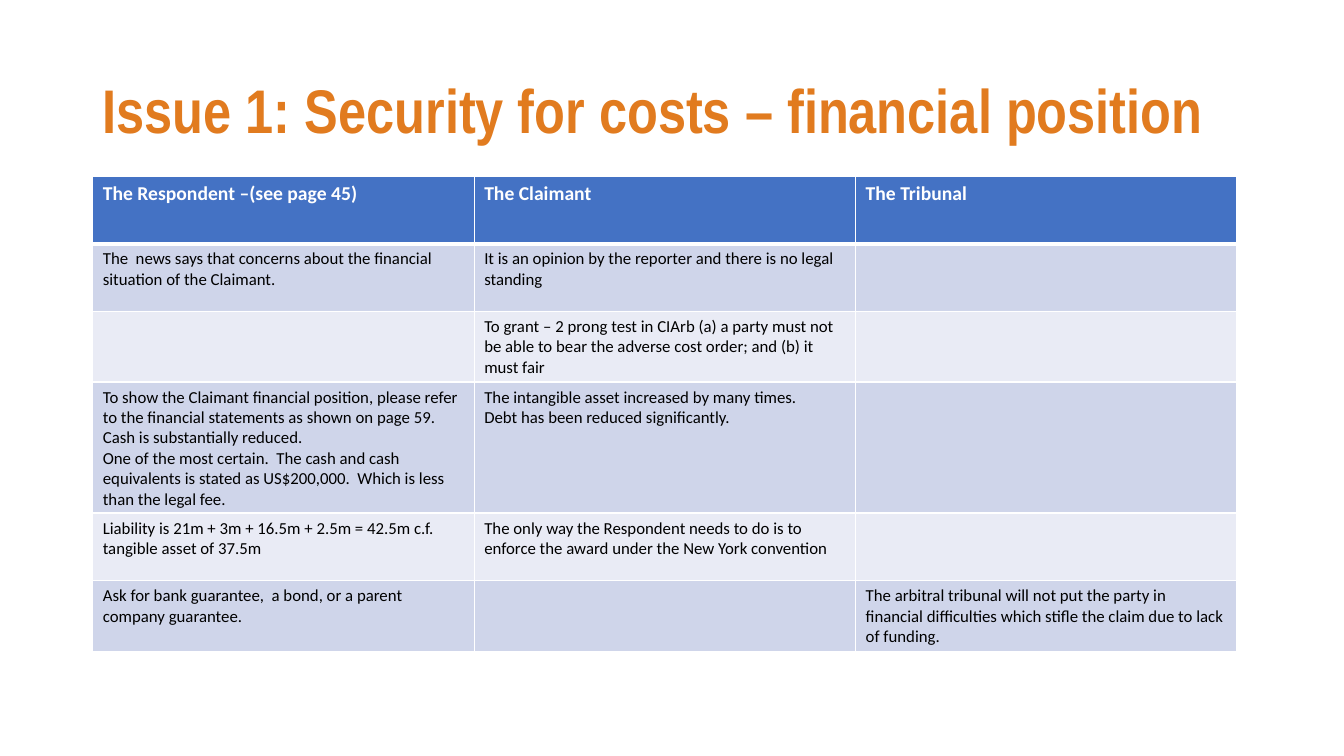
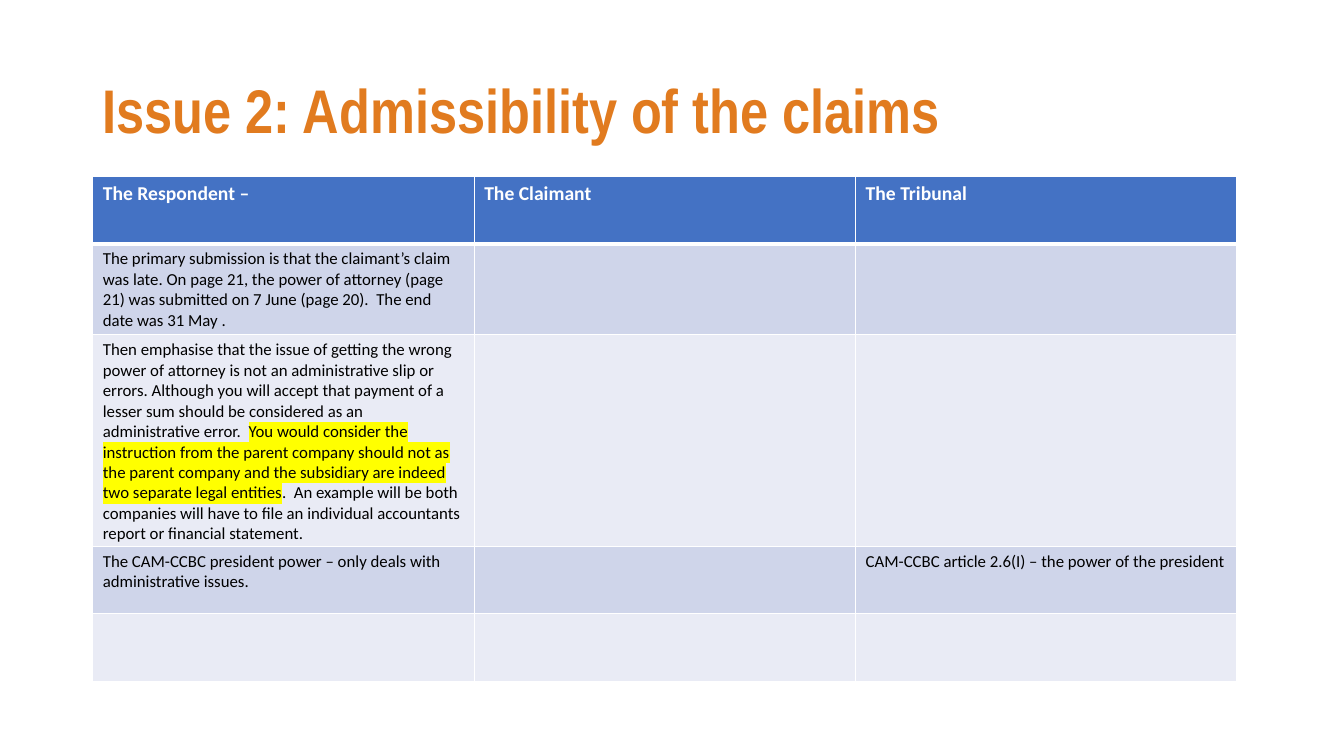
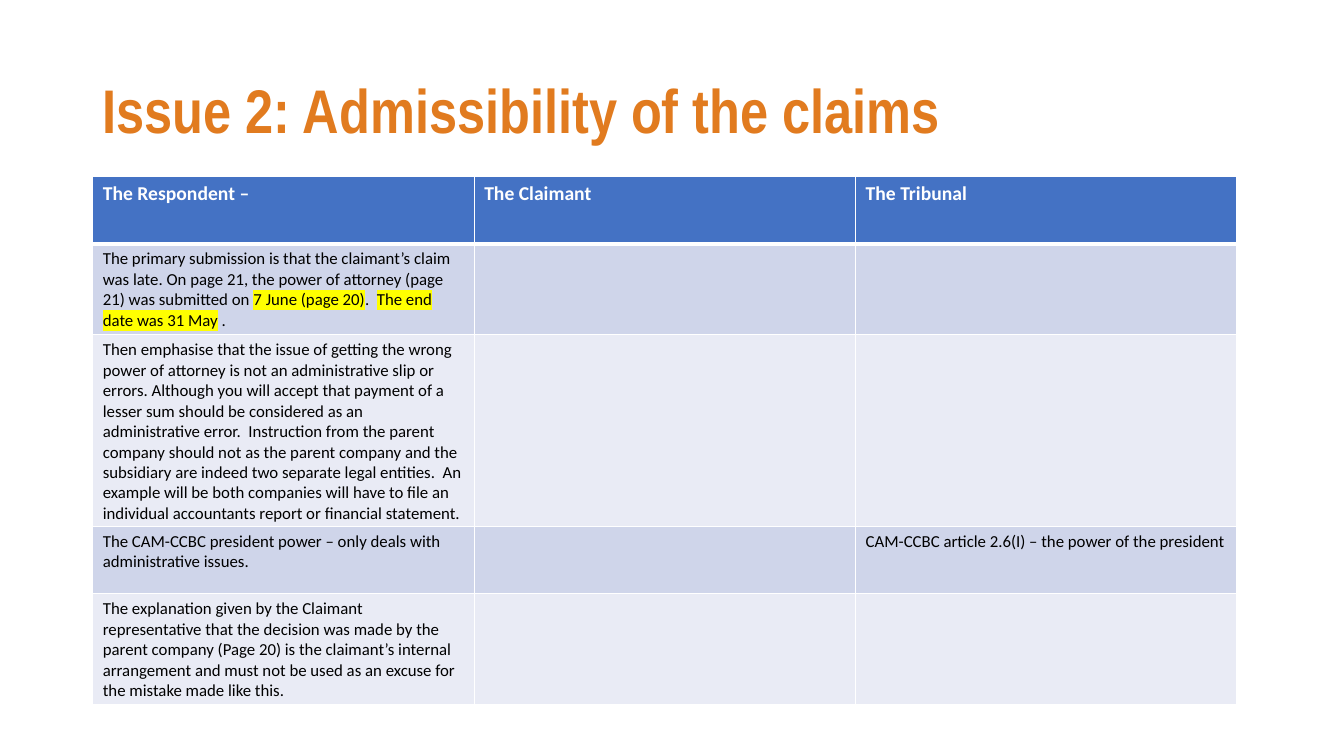
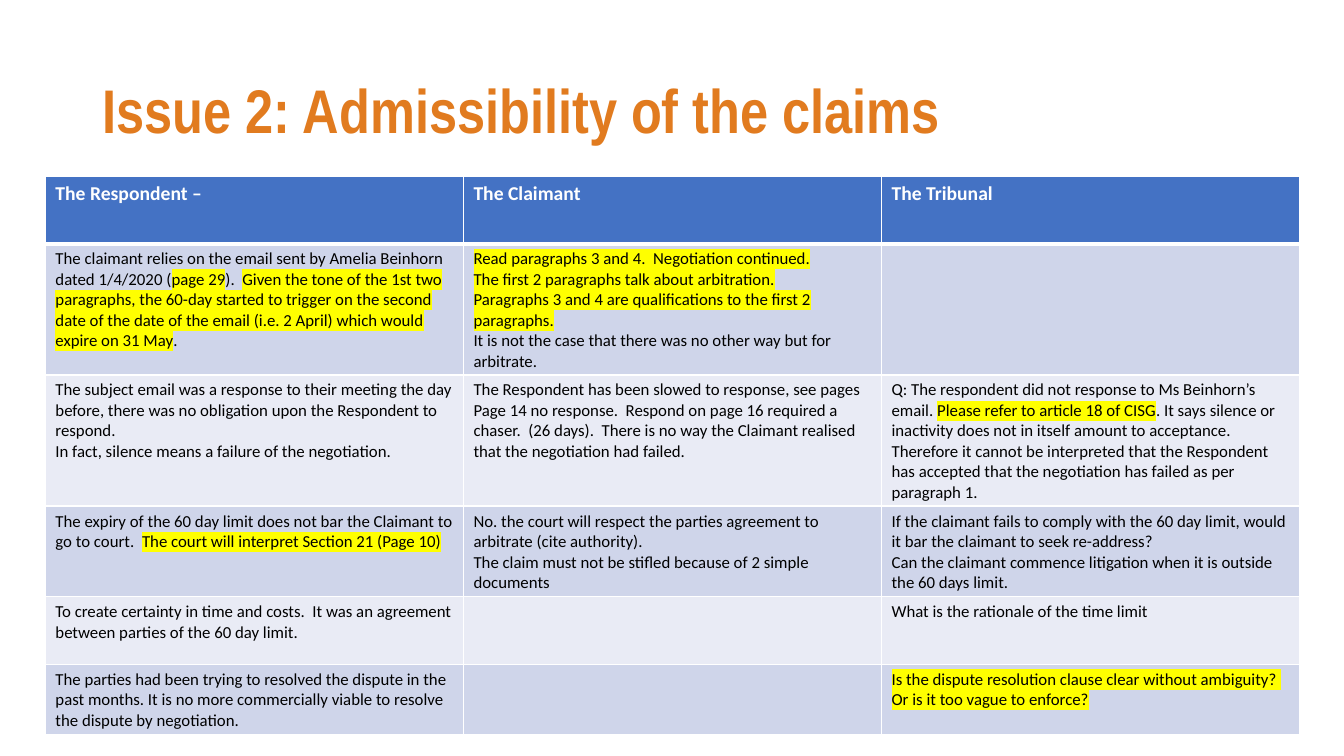
from lxml import etree
from pptx import Presentation
from pptx.dml.color import RGBColor
from pptx.enum.text import MSO_ANCHOR
from pptx.oxml.ns import qn
from pptx.util import Inches, Pt

MIDDLE = MSO_ANCHOR.MIDDLE
SLIDE_W, SLIDE_H = 13.33, 7.5
MARGIN, TABLE_TOP, ROW_H = 0.92, 1.75, 0.67
TABLE_W, WIDE_LEFT, WIDE_W = 11.35, 0.45, 12.44
TITLE_FONT, BODY_FONT = "Arial Narrow", "Calibri"
ORANGE, BLUE, WHITE, BLACK, YELLOW = "E17B1F", "4472C4", "FFFFFF", "000000", "FFFF00"
BANDS = ("CFD5EA", "E9EBF5")
THIN, THICK = 1, 3
MARK = "|"

ADMISSIBILITY = "Issue 2: Admissibility of the claims"
HEADINGS = ["The Respondent –", "The Claimant", "The Tribunal"]
LATE_CLAIM = (
    "The primary submission is that the claimant’s claim was late. On page 21, "
    "the power of attorney (page 21) was submitted on "
)
WRONG_POWER = (
    "Then emphasise that the issue of getting the wrong power of attorney is not an "
    "administrative slip or errors. Although you will accept that payment of a lesser "
    "sum should be considered as an administrative error.  "
)
SEPARATE = (
    "nstruction from the parent company should not as the parent company and the "
    "subsidiary are indeed two separate legal entities"
)
EXAMPLE = (
    ".  An example will be both companies will have to file an individual accountants "
    "report or financial statement."
)
PRESIDENT_ROW = [
    "The CAM-CCBC president power – only deals with administrative issues.",
    "",
    "CAM-CCBC article 2.6(I) – the power of the president",
]

FINANCIAL_ROWS = [
    ["The Respondent –(see page 45)", *HEADINGS[1:]],
    ["The  news says that concerns about the financial situation of the Claimant.",
     "It is an opinion by the reporter and there is no legal standing", ""],
    ["",
     "To grant – 2 prong test in CIArb (a) a party must not be able to bear the adverse "
     "cost order; and (b) it must fair", ""],
    ["To show the Claimant financial position, please refer to the financial statements "
     "as shown on page 59.  Cash is substantially reduced.\n"
     "One of the most certain.  The cash and cash equivalents is stated as US$200,000.  "
     "Which is less than the legal fee.",
     "The intangible asset increased by many times.\n"
     "Debt has been reduced significantly.", ""],
    ["Liability is 21m + 3m + 16.5m + 2.5m = 42.5m c.f. tangible asset of 37.5m",
     "The only way the Respondent needs to do is to enforce the award under the "
     "New York convention", ""],
    ["Ask for bank guarantee,  a bond, or a parent company guarantee.", "",
     "The arbitral tribunal will not put the party in financial difficulties which "
     "stifle the claim due to lack of funding."],
]

POWER_ROWS = [
    HEADINGS,
    [LATE_CLAIM + "7 June (page 20).  The end date was 31 May .", "", ""],
    [WRONG_POWER + "|You would consider the i" + SEPARATE + MARK + EXAMPLE, "", ""],
    PRESIDENT_ROW,
    ["", "", ""],
]

EXCUSE_ROWS = [
    HEADINGS,
    [LATE_CLAIM + "|7 June (page 20)|.  |The end date was 31 May| .", "", ""],
    [WRONG_POWER + "I" + SEPARATE + EXAMPLE, "", ""],
    PRESIDENT_ROW,
    ["The explanation given by the Claimant representative that the decision was made by "
     "the parent company (Page 20) is the claimant’s internal arrangement and must not be "
     "used as an excuse for the mistake made like this.", "", ""],
]

TIME_LIMIT_ROWS = [
    HEADINGS,
    ["The claimant relies on the email sent by Amelia Beinhorn dated 1/4/2020 (|page 29|).  "
     "|Given the tone of the 1st two paragraphs, the 60-day started to trigger on the second "
     "date of the date of the email (i.e. 2 April) which would expire on 31 May|.",
     "|Read paragraphs 3 and 4.  Negotiation continued.|\n"
     "|The first 2 paragraphs talk about arbitration.|\n"
     "|Paragraphs 3 and 4 are qualifications to the first 2 paragraphs.|\n"
     "It is not the case that there was no other way but for arbitrate.", ""],
    ["The subject email was a response to their meeting the day before, there was no "
     "obligation upon the Respondent to respond.\n"
     "In fact, silence means a failure of the negotiation.",
     "The Respondent has been slowed to response, see pages Page 14 no response.  Respond "
     "on page 16 required a chaser.  (26 days).  There is no way the Claimant realised "
     "that the negotiation had failed.",
     "Q: The respondent did not response to Ms Beinhorn’s email. |Please refer to article "
     "18 of CISG|. It says silence or inactivity does not in itself amount to acceptance.  "
     "Therefore it cannot be interpreted that the Respondent has accepted that the "
     "negotiation has failed as per paragraph 1."],
    ["The expiry of the 60 day limit does not bar the Claimant to go to court.  "
     "|The court will interpret Section 21 (Page 10)|",
     "No. the court will respect the parties agreement to arbitrate (cite authority).\n"
     "The claim must not be stifled because of 2 simple documents",
     "If the claimant fails to comply with the 60 day limit, would it bar the claimant to "
     "seek re-address?\n"
     "Can the claimant commence litigation when it is outside the 60 days limit."],
    ["To create certainty in time and costs.  It was an agreement between parties of the "
     "60 day limit.", "", "What is the rationale of the time limit"],
    ["The parties had been trying to resolved the dispute in the past months. It is no more "
     "commercially viable to resolve the dispute by negotiation.", "",
     "|Is the dispute resolution clause clear without ambiguity?  Or is it too vague to "
     "enforce?|"],
]


def rgb(value):
    """Turn a hex string into a colour."""
    return RGBColor.from_string(value)


def set_font(p, name, size, color, bold):
    """Set the font of a whole paragraph."""
    p.font.name = name
    p.font.size = Pt(size)
    p.font.bold = bold
    p.font.color.rgb = rgb(color)


def add_color(parent, tag, color):
    """Append an element of the given tag that holds a colour."""
    holder = etree.SubElement(parent, qn(tag))
    etree.SubElement(holder, qn("a:srgbClr"), val=color)


def add_runs(p, text):
    """Write text, highlighting what stands between marks."""
    for i, part in enumerate(text.split(MARK)):
        if part:
            r = p.add_run()
            r.text = part
            if i % 2:
                add_color(r.font._element, "a:highlight", YELLOW)


def set_borders(cell, top, bottom):
    """Draw white borders round a cell, widths in points."""
    tc_pr = cell._tc.get_or_add_tcPr()
    for side, width in zip("LRTB", (THIN, THIN, top, bottom)):
        line = etree.SubElement(tc_pr, qn(f"a:ln{side}"), w=str(Pt(width)))
        add_color(line, "a:solidFill", WHITE)


def fill_cell(cell, text, row):
    """Write and style one cell according to its row."""
    header = row == 0
    set_borders(cell, THICK if row == 1 else THIN, THICK if header else THIN)
    cell.fill.solid()
    cell.fill.fore_color.rgb = rgb(BLUE if header else BANDS[(row - 1) % 2])
    tf = cell.text_frame
    for i, line in enumerate(text.split("\n")):
        p = tf.add_paragraph() if i else tf.paragraphs[0]
        add_runs(p, line)
        set_font(p, BODY_FONT, 14 if header else 12, WHITE if header else BLACK, header)


def add_title(s, text):
    """Add the slide title."""
    box = s.shapes.add_textbox(
        Inches(MARGIN), Inches(0.4), Inches(SLIDE_W - 2 * MARGIN), Inches(1.45))
    tf = box.text_frame
    tf.word_wrap = True
    tf.vertical_anchor = MIDDLE
    p = tf.paragraphs[0]
    p.text = text
    p.line_spacing = 0.9
    set_font(p, TITLE_FONT, 44, ORANGE, True)


def add_argument_table(s, rows, left, width):
    """Add a table of arguments with equal columns."""
    table = s.shapes.add_table(
        len(rows), len(rows[0]), Inches(left), Inches(TABLE_TOP),
        Inches(width), Inches(ROW_H * len(rows))).table
    for i, row in enumerate(rows):
        for j, text in enumerate(row):
            fill_cell(table.cell(i, j), text, i)


def add_issue_slide(prs, title, rows, left=MARGIN, width=TABLE_W):
    """Add a slide with a title and its arguments."""
    s = prs.slides.add_slide(prs.slide_layouts[6])
    add_title(s, title)
    add_argument_table(s, rows, left, width)


def main():
    """Build and save the presentation."""
    prs = Presentation()
    prs.slide_width, prs.slide_height = Inches(SLIDE_W), Inches(SLIDE_H)
    add_issue_slide(prs, "Issue 1: Security for costs – financial position", FINANCIAL_ROWS)
    add_issue_slide(prs, ADMISSIBILITY, POWER_ROWS)
    add_issue_slide(prs, ADMISSIBILITY, EXCUSE_ROWS)
    add_issue_slide(prs, ADMISSIBILITY, TIME_LIMIT_ROWS, WIDE_LEFT, WIDE_W)
    prs.save("out.pptx")


if __name__ == "__main__":
    main()
